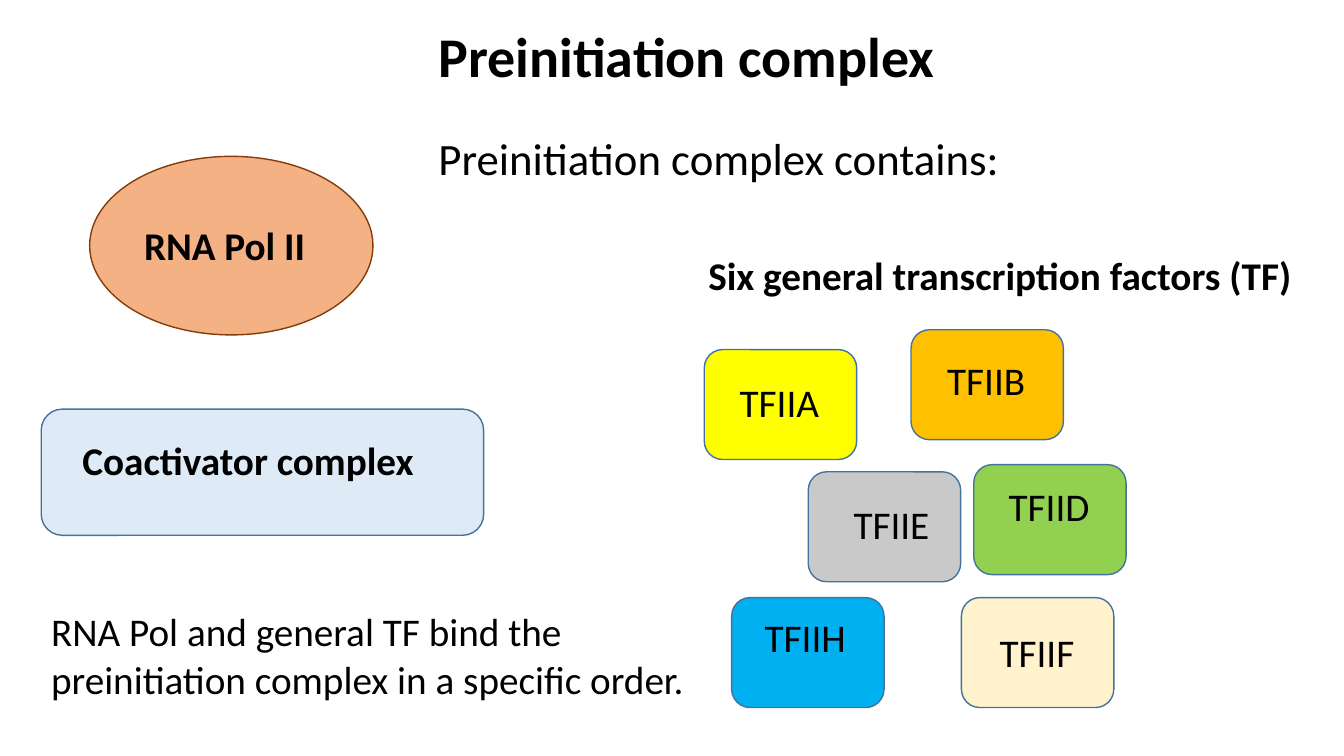
"""Build the slide on the parts of the preinitiation complex."""
from pptx import Presentation
from pptx.dml.color import RGBColor
from pptx.enum.shapes import MSO_SHAPE
from pptx.enum.text import MSO_ANCHOR, PP_ALIGN
from pptx.util import Cm, Pt

ROUNDED, OVAL = MSO_SHAPE.ROUNDED_RECTANGLE, MSO_SHAPE.OVAL
TOP, LEFT = MSO_ANCHOR.TOP, PP_ALIGN.LEFT

FONT, BLACK, BLUE, BROWN = "Calibri", "000000", "43739E", "843C0B"
FACTOR_SIZE = (3.84, 2.77)
LABEL_SIZE = (2.56, 1.45)

TITLE = ("Preinitiation complex", (10.8, 0.41, 13.16, 1.96))
COMPONENTS = [
    (ROUNDED, (1.04, 10.31, 11.15, 3.18), "DEEBF7", BLUE),
    (OVAL, (2.26, 3.94, 7.14, 4.5), "F4B183", BROWN),
]
FACTORS = [
    ("TFIIF", (24.23, 15.06), (24.94, 15.72), "FFF2CC"),
    ("TFIIH", (18.44, 15.06), (19.02, 15.34), "00B0F0"),
    ("TFIIE", (20.37, 11.89), (21.26, 12.47), "C9C9C9"),
    ("TFIID", (24.54, 11.71), (25.17, 12.04), "92D050"),
    ("TFIIB", (22.96, 8.31), (23.62, 8.86), "FFC000"),
    ("TFIIA", (17.75, 8.81), (18.39, 9.42), "FFFF00"),
]
CAPTIONS = [
    (["Preinitiation complex contains:"], (10.8, 3.18, 15.06, 1.63), 32, False),
    (["RNA Pol II"], (3.38, 5.46, 4.62, 1.45), 28, True),
    (["Six general transcription factors (TF)"], (17.6, 6.2, 15.39, 1.45), 28, True),
    (["Coactivator complex"], (1.83, 10.87, 8.97, 1.45), 28, True),
    (["RNA Pol and general TF bind the", "preinitiation complex in a specific order."],
     (1.04, 15.19, 16.87, 2.64), 28, False),
]


def color(value):
    return RGBColor.from_string(value)


def write(frame, lines, size, bold):
    frame.word_wrap = False
    frame.vertical_anchor = TOP
    for index, line in enumerate(lines):
        paragraph = frame.add_paragraph() if index else frame.paragraphs[0]
        paragraph.alignment = LEFT
        paragraph.line_spacing = 1.0
        paragraph.space_before = Pt(0)
        run = paragraph.add_run()
        run.text = line
        run.font.name = FONT
        run.font.size = Pt(size)
        run.font.bold = bold
        run.font.color.rgb = color(BLACK)


def add_component(slide, kind, box, fill, outline):
    component = slide.shapes.add_shape(kind, *map(Cm, box))
    component.shadow.inherit = False
    component.fill.solid()
    component.fill.fore_color.rgb = color(fill)
    component.line.color.rgb = color(outline)
    component.line.width = Pt(1)


def add_caption(slide, lines, box, size, bold):
    caption = slide.shapes.add_textbox(*map(Cm, box))
    write(caption.text_frame, lines, size, bold)


def main():
    deck = Presentation()
    deck.slide_width, deck.slide_height = Cm(33.87), Cm(19.05)
    slide = deck.slides.add_slide(deck.slide_layouts[5])

    heading, box = TITLE
    title = slide.shapes.title
    title.left, title.top, title.width, title.height = map(Cm, box)
    write(title.text_frame, [heading], 40, True)

    for component in COMPONENTS:
        add_component(slide, *component)
    for _, corner, _, fill in FACTORS:
        add_component(slide, ROUNDED, corner + FACTOR_SIZE, fill, BLUE)
    for name, _, corner, _ in FACTORS:
        add_caption(slide, [name], corner + LABEL_SIZE, 28, False)
    for caption in CAPTIONS:
        add_caption(slide, *caption)

    deck.save("out.pptx")


if __name__ == "__main__":
    main()
